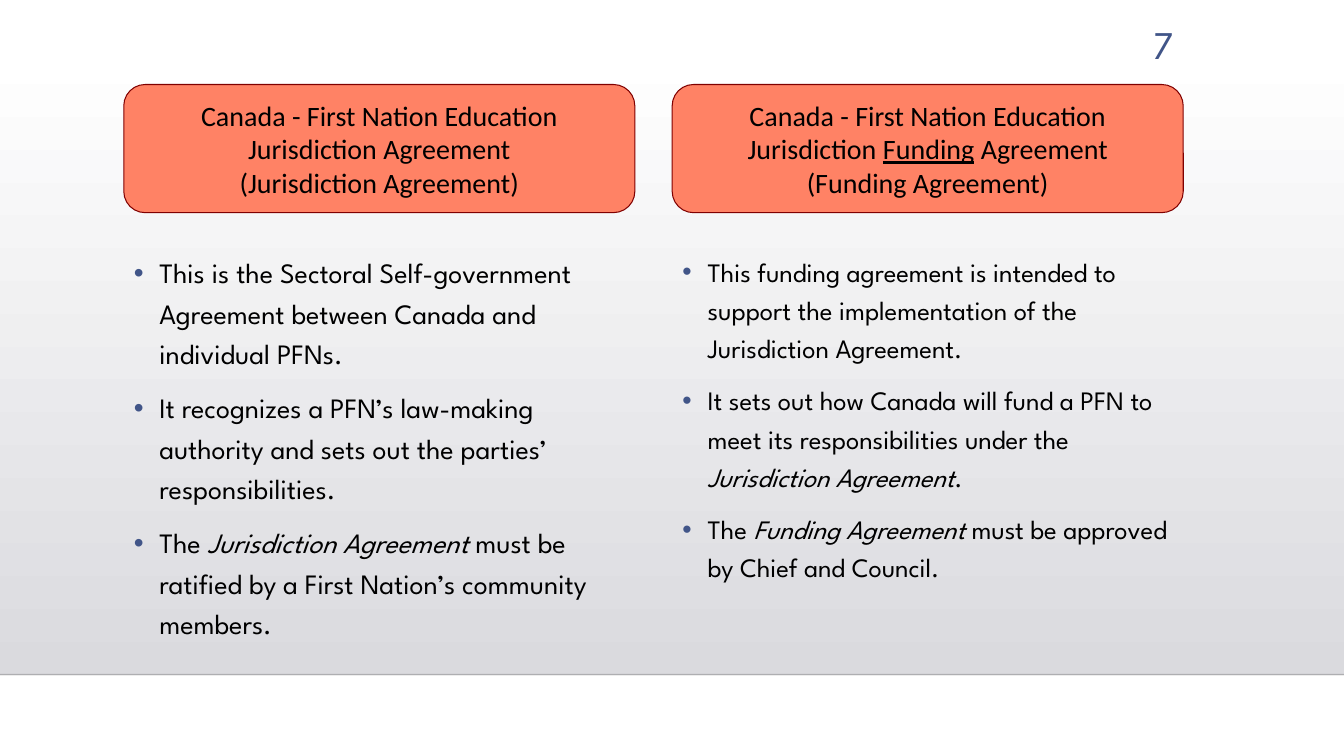
from lxml import etree
from pptx import Presentation
from pptx import util as u
from pptx.dml.color import RGBColor
from pptx.enum import shapes, text
from pptx.oxml.ns import qn

COLOURS = {
    "white": "FFFFFF",
    "grey": "DADADE",
    "black": "000000",
    "blue": "415588",
    "coral": "FF8265",
    "maroon": "800000",
}
BODY_FONT = "League Spartan"
HEADING_FONT = "Calibri"

PAGE_WIDTH, PAGE_HEIGHT = u.Cm(33.87), u.Cm(19.05)
BAND_TOP, BAND_HEIGHT = u.Cm(1.3), u.Cm(15.7)
COLUMN_WIDTH = u.Cm(12.88)
HEADING_TOP, HEADING_HEIGHT = u.Cm(2.13), u.Cm(3.23)
LIST_TOP, LIST_HEIGHT = u.Cm(6.15), u.Cm(10.08)
BULLET_INDENT = u.Cm(0.64)

# Text between bars is emphasised: underlined in headings, italic in lists.
COLUMNS = [
    {
        "left": u.Cm(3.12),
        "size": 20,
        "heading": [
            "Canada - First Nation Education Jurisdiction Agreement",
            "(Jurisdiction Agreement)",
        ],
        "points": [
            "This is the Sectoral Self-government Agreement between Canada "
            "and individual PFNs.",
            "It recognizes a PFN’s law-making authority and sets out the "
            "parties’ responsibilities.",
            "The |Jurisdiction Agreement |must be ratified by a First "
            "Nation’s community members.",
        ],
    },
    {
        "left": u.Cm(16.94),
        "size": 19,
        "heading": [
            "Canada - First Nation Education Jurisdiction |Funding| Agreement",
            "(Funding Agreement)",
        ],
        "points": [
            "This funding agreement is intended to support the "
            "implementation of the Jurisdiction Agreement.",
            "It sets out how Canada will fund a PFN to meet its "
            "responsibilities under the |Jurisdiction Agreement|.",
            "The |Funding Agreement |must be approved by Chief and Council.",
        ],
    },
]


def colour(name):
    return RGBColor.from_string(COLOURS[name])


def add_text(para, content, font=BODY_FONT, size=20, fill="black", emphasis="italic"):
    """Fill a paragraph, giving every second bar-separated part the emphasis."""
    for index, part in enumerate(content.split("|")):
        span = para.add_run()
        span.text = part
        span.font.name = font
        span.font.size = u.Pt(size)
        span.font.color.rgb = colour(fill)
        if index % 2:
            setattr(span.font, emphasis, True)


def paragraphs(frame, contents):
    """Yield a paragraph of the frame with each of the contents."""
    for index, content in enumerate(contents):
        yield (frame.add_paragraph() if index else frame.paragraphs[0]), content


def set_bullet(para):
    props = para._p.get_or_add_pPr()
    props.set("marL", str(BULLET_INDENT))
    props.set("indent", str(-BULLET_INDENT))
    bullet_colour = etree.SubElement(props, qn("a:buClr"))
    etree.SubElement(bullet_colour, qn("a:srgbClr"), val=COLOURS["blue"])
    etree.SubElement(props, qn("a:buFont"), typeface="Arial")
    etree.SubElement(props, qn("a:buChar"), char="•")


def add_band(page):
    band = page.shapes.add_shape(
        shapes.MSO_SHAPE.RECTANGLE, 0, BAND_TOP, PAGE_WIDTH, BAND_HEIGHT)
    band.shadow.inherit = False
    band.line.fill.background()
    band.fill.gradient()
    band.fill.gradient_angle = 270
    for stop, name in zip(band.fill.gradient_stops, ("white", "grey")):
        stop.color.rgb = colour(name)

    bottom = BAND_TOP + BAND_HEIGHT
    rule = page.shapes.add_connector(
        shapes.MSO_CONNECTOR.STRAIGHT, 0, bottom, PAGE_WIDTH, bottom)
    rule.line.width = u.Pt(1)
    rule.line.color.rgb = colour("black")
    etree.SubElement(next(rule.line._ln.iter(qn("a:srgbClr"))), qn("a:alpha"), val="20000")
    etree.SubElement(rule._element.spPr, qn("a:effectLst"))

    # Behind the placeholders, which the layout has already put on the page
    for position, shape in enumerate((band, rule), start=2):
        page.shapes._spTree.insert(position, shape._element)


def add_heading(page, left, lines):
    box = page.shapes.add_shape(
        shapes.MSO_SHAPE.ROUNDED_RECTANGLE, left, HEADING_TOP, COLUMN_WIDTH, HEADING_HEIGHT)
    box.shadow.inherit = False
    box.fill.solid()
    box.fill.fore_color.rgb = colour("coral")
    box.line.color.rgb = colour("maroon")
    box.line.width = u.Pt(0.75)
    box.text_frame.word_wrap = True
    box.text_frame.vertical_anchor = text.MSO_ANCHOR.MIDDLE
    for para, line in paragraphs(box.text_frame, lines):
        para.alignment = text.PP_ALIGN.CENTER
        add_text(para, line, font=HEADING_FONT, emphasis="underline")


def fill_list(box, left, points, size):
    box.left, box.top = left, LIST_TOP
    box.width, box.height = COLUMN_WIDTH, LIST_HEIGHT
    frame = box.text_frame
    frame.word_wrap = True
    frame.auto_size = text.MSO_AUTO_SIZE.NONE
    frame.vertical_anchor = text.MSO_ANCHOR.TOP
    for index, (para, point) in enumerate(paragraphs(frame, points)):
        set_bullet(para)
        para.line_spacing = 1.2
        para.space_before = u.Pt(10 if index else 0)
        add_text(para, point, size=size)


def add_page_number(page, number):
    box = page.shapes.add_textbox(u.Cm(27.56), u.Cm(0.38), u.Cm(2.26), u.Cm(1.4))
    box.text_frame.word_wrap = True
    para = box.text_frame.paragraphs[0]
    para.alignment = text.PP_ALIGN.RIGHT
    add_text(para, number, size=28, fill="blue")


def main():
    deck = Presentation()
    deck.slide_width, deck.slide_height = PAGE_WIDTH, PAGE_HEIGHT
    page = deck.slides.add_slide(deck.slide_layouts.get_by_name("Two Content"))
    title, *lists = page.placeholders
    title._element.getparent().remove(title._element)

    add_band(page)
    add_page_number(page, "7")
    for box, column in zip(lists, COLUMNS):
        add_heading(page, column["left"], column["heading"])
        fill_list(box, column["left"], column["points"], column["size"])
    deck.save("out.pptx")


if __name__ == "__main__":
    main()
